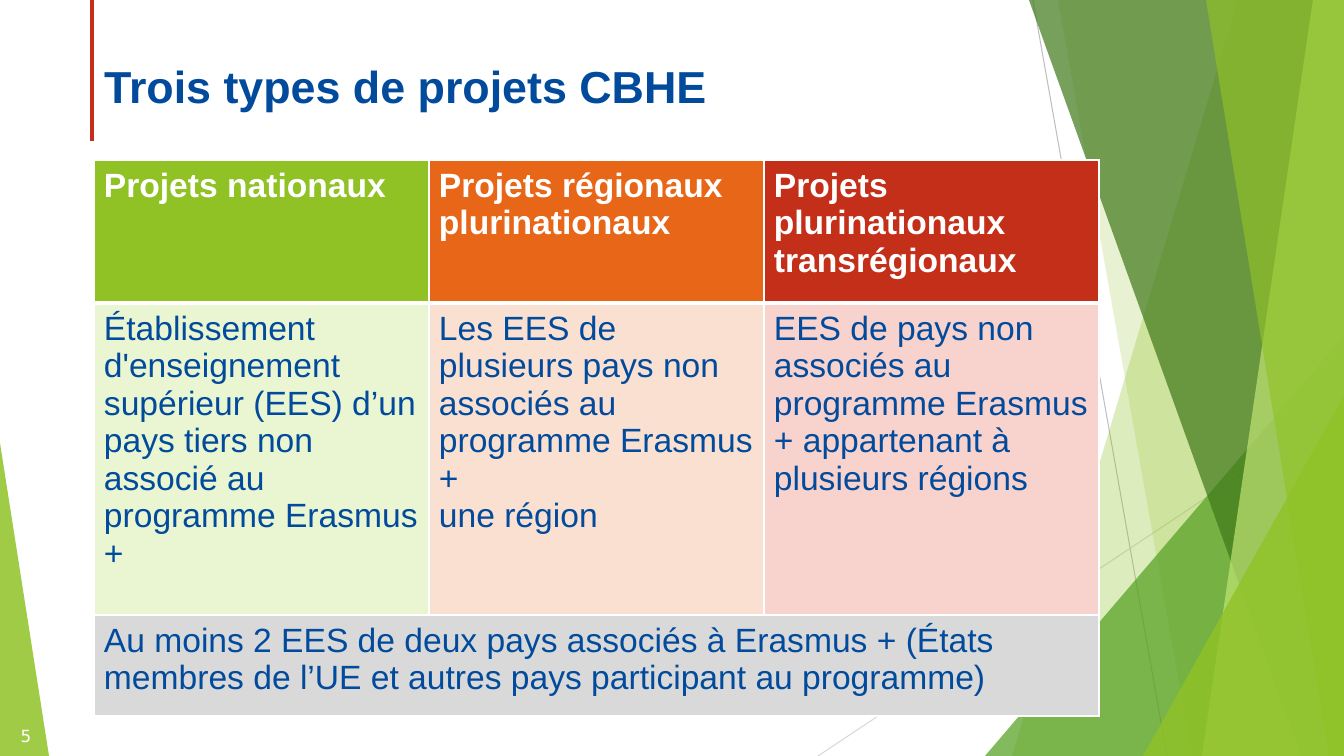
"""Build the slide on the three types of CBHE projects."""
from lxml import etree
from pptx import Presentation
from pptx.dml.color import RGBColor
from pptx.enum.shapes import MSO_CONNECTOR, MSO_SHAPE
from pptx.enum.text import MSO_ANCHOR, MSO_AUTO_SIZE, PP_ALIGN
from pptx.oxml.ns import qn
from pptx.util import Pt

STRAIGHT = MSO_CONNECTOR.STRAIGHT
TRIANGLE = MSO_SHAPE.ISOSCELES_TRIANGLE
TOP, MIDDLE = MSO_ANCHOR.TOP, MSO_ANCHOR.MIDDLE
LEFT, CENTER = PP_ALIGN.LEFT, PP_ALIGN.CENTER
NO_AUTOFIT = MSO_AUTO_SIZE.NONE

EMU_PER_PX = 914400 / 100.8
WIDTH, HEIGHT = 1344, 756

COLORS = {
    "white": "FFFFFF", "blue": "024B9C", "lime": "90C226", "orange": "E76618",
    "red": "C42F1A", "pale_lime": "EAF6D1", "pale_orange": "FAE0D1",
    "pale_red": "F8D2CC", "gray": "D9D9D9", "mid_gray": "BFBFBF",
    "green": "54A021", "dark_green": "3F7819", "light_lime": "C0E474",
}

TITLE = "Trois types de projets CBHE"
TITLE_BOX = (94, 54, 962, 85)
PAGE_NUMBER = "5"
PAGE_NUMBER_BOX = (0, 716, 52, 40)

PROJECT_TYPES = [
    ("Projets nationaux", "lime",
     "Établissement d'enseignement supérieur (EES) d’un pays tiers non associé "
     "au programme Erasmus +", "pale_lime"),
    ("Projets régionaux plurinationaux", "orange",
     "Les EES de plusieurs pays non associés au programme Erasmus +\nune région",
     "pale_orange"),
    ("Projets plurinationaux transrégionaux", "red",
     "EES de pays non associés au programme Erasmus + appartenant à plusieurs "
     "régions", "pale_red"),
]
REQUIREMENT = ("Au moins 2 EES de deux pays associés à Erasmus + (États membres de "
               "l’UE et autres pays participant au programme)")
TABLE_LEFT, TABLE_TOP, COLUMN_WIDTH = 94, 160, 335
ROW_HEIGHTS = (143, 312, 101)
CELL_MARGINS = {"margin_left": 10, "margin_right": 10, "margin_top": 7, "margin_bottom": 7}

RULES = [
    ((1033, 0, 1167, HEIGHT), "mid_gray", 0.75),
    ((WIDTH, 406, 818, HEIGHT), "gray", 0.75),
    ((92, 0, 92, 141), "red", 2.25),
]
BANDS_BACK = [(1238, 1012, "lime", 30), (1058, 1192, "lime", 20)]
BANDS_FRONT = [(1029, 1301, "dark_green", 70), (1313, 1202, "light_lime", 70),
               (1206, 1329, "lime", 65)]
RIGHT_BACK = ((985, 336, 359, 420), 1, "green", 72)
RIGHT_FRONT = ((1143, 396, 201, 360), 1, "lime", 80)
LEFT_CORNER = ((0, 443, 49, 313), 0, "lime", 85)


def px(length):
    return round(length * EMU_PER_PX)


def rgb(color):
    return RGBColor.from_string(COLORS[color])


def style_text(frame, text, color, size, font="Arial", bold=False, align=LEFT):
    frame.text = text
    frame.word_wrap = True
    for paragraph in frame.paragraphs:
        paragraph.alignment = align
        formats = {"name": font, "size": Pt(size), "bold": bold}
        for run in paragraph.runs:
            for name, value in formats.items():
                setattr(run.font, name, value)
            run.font.color.rgb = rgb(color)


def paint(shape, color, opacity):
    shape.shadow.inherit = False
    shape.line.fill.background()
    shape.fill.solid()
    shape.fill.fore_color.rgb = rgb(color)
    tint = shape.fill._xPr.find(qn("a:solidFill"))[0]
    etree.SubElement(tint, qn("a:alpha"), val=str(opacity * 1000))


def add_rule(shapes, ends, color, width):
    rule = shapes.add_connector(STRAIGHT, *map(px, ends))
    rule.line.color.rgb = rgb(color)
    rule.line.width = Pt(width)
    etree.SubElement(rule._element.spPr, qn("a:effectLst"))


def add_band(shapes, top_x, bottom_x, color, opacity):
    outline = shapes.build_freeform(top_x, 0, scale=EMU_PER_PX)
    outline.add_line_segments([(WIDTH, 0), (WIDTH, HEIGHT), (bottom_x, HEIGHT)], close=True)
    paint(outline.convert_to_shape(), color, opacity)


def add_triangle(shapes, box, apex, color, opacity):
    triangle = shapes.add_shape(TRIANGLE, *map(px, box))
    triangle.adjustments[0] = apex
    paint(triangle, color, opacity)


def add_borders(cell, top, bottom):
    properties = cell._tc.get_or_add_tcPr()
    for side, width in (("L", 1), ("R", 1), ("T", top), ("B", bottom)):
        border = etree.SubElement(properties, qn(f"a:ln{side}"), w=str(Pt(width)))
        fill = etree.SubElement(border, qn("a:solidFill"))
        etree.SubElement(fill, qn("a:srgbClr"), val=COLORS["white"])


def add_project_table(shapes):
    columns = len(PROJECT_TYPES)
    table = shapes.add_table(
        len(ROW_HEIGHTS), columns, px(TABLE_LEFT), px(TABLE_TOP),
        px(COLUMN_WIDTH * columns), px(sum(ROW_HEIGHTS))).table
    table.horz_banding = False
    for column in table.columns:
        column.width = px(COLUMN_WIDTH)
    for row, height in zip(table.rows, ROW_HEIGHTS):
        row.height = px(height)
    rows = [
        [(name, fill) for name, fill, _, _ in PROJECT_TYPES],
        [(text, fill) for _, _, text, fill in PROJECT_TYPES],
        [(REQUIREMENT, "gray")] + [("", "gray")] * (columns - 1),
    ]
    for r, row in enumerate(rows):
        header = r == 0
        for c, (text, fill) in enumerate(row):
            cell = table.cell(r, c)
            add_borders(cell, top=3 if r == 1 else 1, bottom=3 if header else 1)
            cell.fill.solid()
            cell.fill.fore_color.rgb = rgb(fill)
            for name, value in CELL_MARGINS.items():
                setattr(cell, name, px(value))
            style_text(cell.text_frame, text, "white" if header else "blue", 24, bold=header)
    table.cell(2, 0).merge(table.cell(2, columns - 1))


def main():
    deck = Presentation()
    deck.slide_width, deck.slide_height = px(WIDTH), px(HEIGHT)
    slide = deck.slides.add_slide(deck.slide_layouts[5])
    shapes = slide.shapes

    title = shapes.title
    title.left, title.top, title.width, title.height = map(px, TITLE_BOX)
    style_text(title.text_frame, TITLE, "blue", 32, bold=True)
    title.text_frame.vertical_anchor = TOP
    title.text_frame.auto_size = NO_AUTOFIT

    for rule in RULES:
        add_rule(shapes, *rule)
    for band in BANDS_BACK:
        add_band(shapes, *band)
    add_triangle(shapes, *RIGHT_BACK)
    for band in BANDS_FRONT:
        add_band(shapes, *band)
    for triangle in (RIGHT_FRONT, LEFT_CORNER):
        add_triangle(shapes, *triangle)

    add_project_table(shapes)

    page_number = shapes.add_textbox(*map(px, PAGE_NUMBER_BOX)).text_frame
    style_text(page_number, PAGE_NUMBER, "white", 12, font="DejaVu Sans", align=CENTER)
    page_number.vertical_anchor = MIDDLE

    deck.save("out.pptx")


if __name__ == "__main__":
    main()
